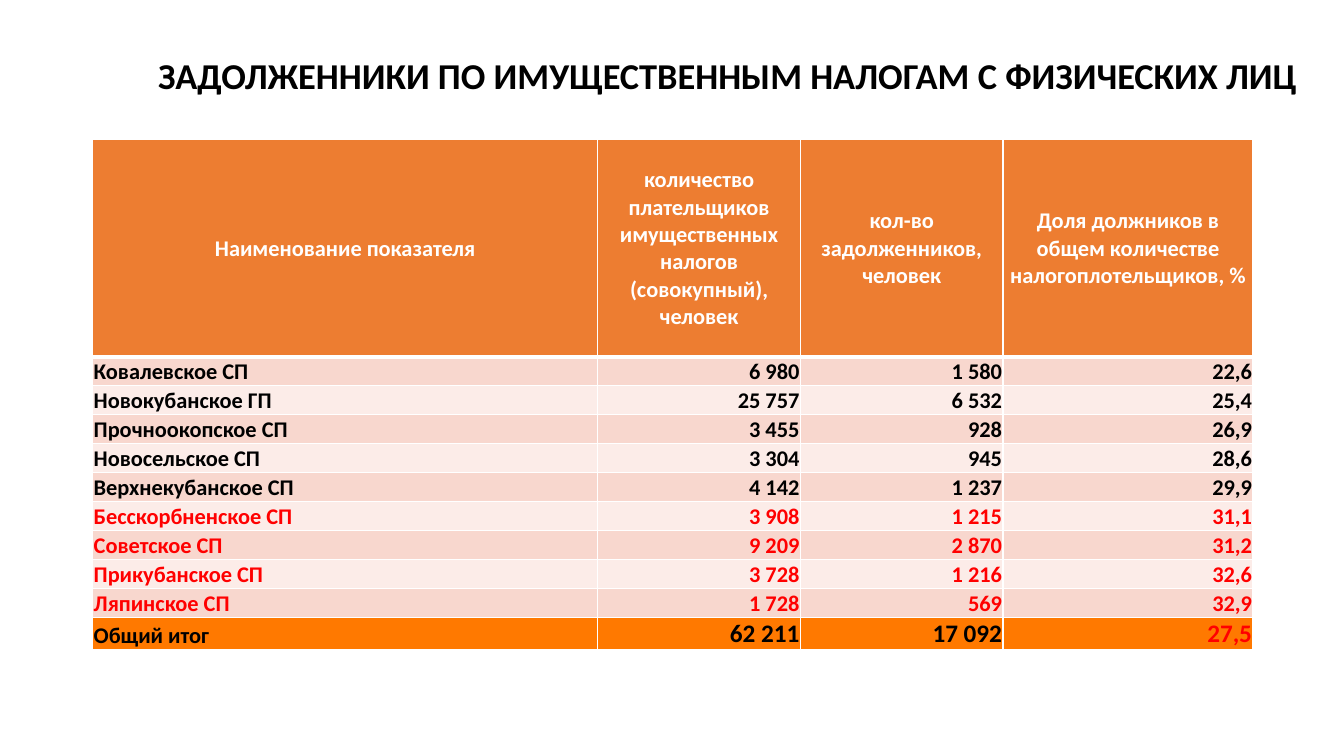
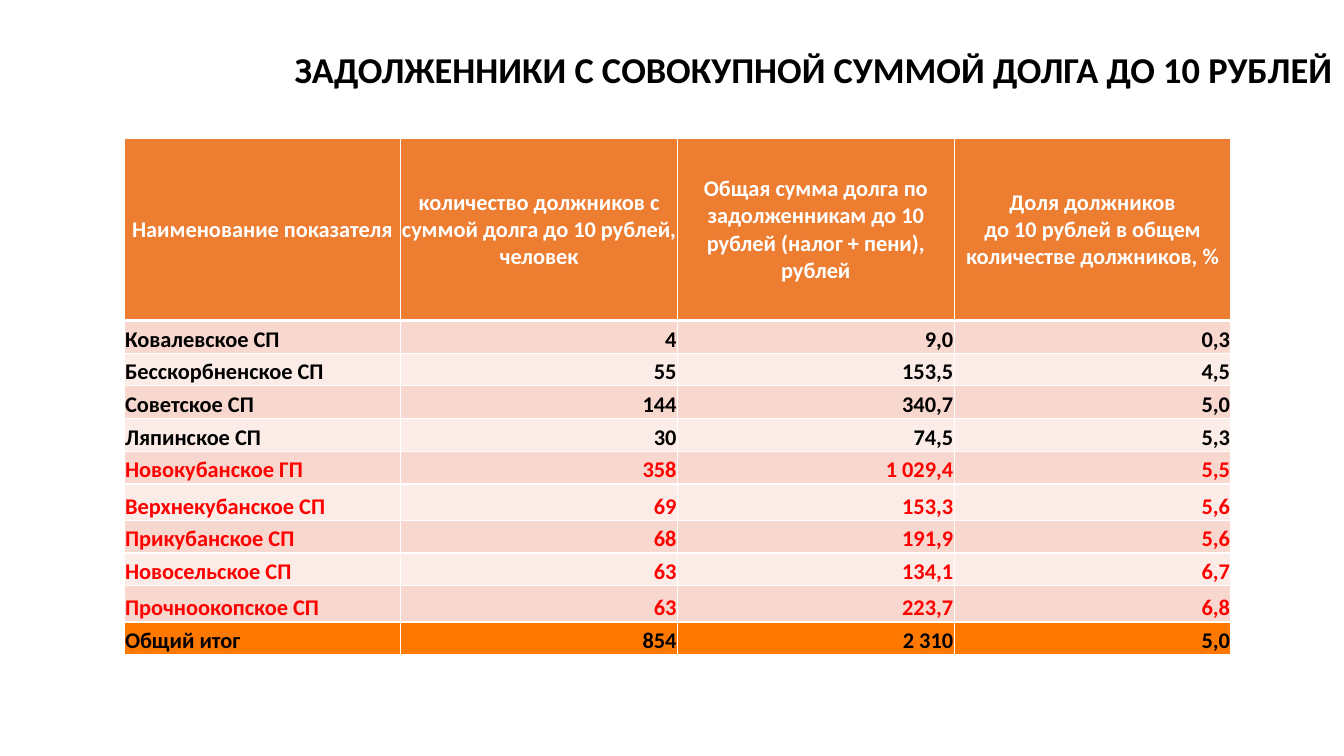
from pptx import Presentation
from pptx.dml.color import RGBColor
from pptx.enum.text import MSO_ANCHOR, PP_ALIGN
from pptx.oxml import parse_xml
from pptx.oxml.ns import nsdecls
from pptx.util import Inches, Pt

COLORS = {
    "white": "FFFFFF",
    "black": "000000",
    "red": "FF0000",
    "header": "ED7D31",
    "odd": "F8D7CE",
    "even": "FCECE8",
    "total": "FF7900",
}


class DebtDeck:
    font_name = "Calibri"
    title_size = 26
    cell_size = 16
    title_width = 87.55
    title_height = 11.33

    def __init__(self):
        self.deck = Presentation()
        self.deck.slide_width = Inches(13.33)
        self.deck.slide_height = Inches(7.5)
        self.page = None

    def across(self, percent):
        return round(self.deck.slide_width * percent / 100)

    def down(self, percent):
        return round(self.deck.slide_height * percent / 100)

    def style(self, para, size, color, align):
        para.alignment = align
        para.font.name = self.font_name
        para.font.size = Pt(size)
        para.font.bold = True
        para.font.color.rgb = RGBColor.from_string(COLORS[color])

    def add_page(self, title, left, top):
        self.page = self.deck.slides.add_slide(self.deck.slide_layouts[5])
        box = self.page.shapes.title
        box.left, box.top = self.across(left), self.down(top)
        box.width, box.height = self.across(self.title_width), self.down(self.title_height)
        frame = box.text_frame
        frame.text = title
        frame.word_wrap = True
        frame.vertical_anchor = MSO_ANCHOR.MIDDLE
        para = frame.paragraphs[0]
        para.line_spacing = 0.9
        self.style(para, self.title_size, "black", PP_ALIGN.RIGHT)

    def borders(self, cell, top, bottom):
        properties = cell._tc.get_or_add_tcPr()
        for side, width in (("L", 1), ("R", 1), ("T", top), ("B", bottom)):
            properties.append(parse_xml(
                f'<a:ln{side} {nsdecls("a")} w="{Pt(width)}"><a:solidFill>'
                f'<a:srgbClr val="{COLORS["white"]}"/></a:solidFill></a:ln{side}>'))

    def fill_cell(self, cell, text, size, color, fill, align, anchor):
        cell.margin_left = cell.margin_right = cell.margin_top = Inches(0.01)
        cell.margin_bottom = 0
        cell.vertical_anchor = anchor
        cell.text = text
        for para in cell.text_frame.paragraphs:
            self.style(para, size, color, align)
        cell.fill.solid()
        cell.fill.fore_color.rgb = RGBColor.from_string(COLORS[fill])

    def add_table(self, left, top, columns, heights, rows, red_rows,
                  total_size=16, total_color="black"):
        table = self.page.shapes.add_table(
            len(rows), len(columns), self.across(left), self.down(top),
            self.across(sum(columns)), self.down(sum(heights))).table
        table.horz_banding = False
        for column, width in zip(table.columns, columns):
            column.width = self.across(width)
        last = len(rows) - 1
        for number, (values, height) in enumerate(zip(rows, heights)):
            table.rows[number].height = self.down(height)
            for place, text in enumerate(values):
                cell = table.cell(number, place)
                self.borders(cell, 3 if number == 1 else 1, 3 if number == 0 else 1)
                if number == 0:
                    self.fill_cell(cell, text, self.cell_size, "white", "header",
                                   PP_ALIGN.CENTER, MSO_ANCHOR.MIDDLE)
                    continue
                size, color = self.cell_size, "red" if number in red_rows else "black"
                fill = "odd" if number % 2 else "even"
                if number == last:
                    fill = "total"
                    size = total_size if place else self.cell_size
                    color = total_color if place == len(columns) - 1 else "black"
                self.fill_cell(cell, text, size, color, fill,
                               PP_ALIGN.RIGHT if place else PP_ALIGN.LEFT, MSO_ANCHOR.BOTTOM)


PROPERTY_TAX = [
    ("Наименование показателя",
     "количество плательщиков имущественных налогов (совокупный), человек",
     "кол-во задолженников, человек",
     "Доля должников в общем количестве налогоплотельщиков, %"),
    ("Ковалевское СП", "6 980", "1 580", "22,6"),
    ("Новокубанское ГП", "25 757", "6 532", "25,4"),
    ("Прочноокопское СП", "3 455", "928", "26,9"),
    ("Новосельское СП", "3 304", "945", "28,6"),
    ("Верхнекубанское СП", "4 142", "1 237", "29,9"),
    ("Бесскорбненское СП", "3 908", "1 215", "31,1"),
    ("Советское СП", "9 209", "2 870", "31,2"),
    ("Прикубанское СП", "3 728", "1 216", "32,6"),
    ("Ляпинское СП", "1 728", "569", "32,9"),
    ("Общий итог", "62 211", "17 092", "27,5"),
]

SMALL_DEBT = [
    ("Наименование показателя",
     "количество должников с суммой долга до 10 рублей, человек",
     "Общая сумма долга по задолженникам до 10 рублей (налог + пени), рублей",
     "Доля должников\nдо 10 рублей в общем количестве должников, %"),
    ("Ковалевское СП", "4", "9,0", "0,3"),
    ("Бесскорбненское СП", "55", "153,5", "4,5"),
    ("Советское СП", "144", "340,7", "5,0"),
    ("Ляпинское СП", "30", "74,5", "5,3"),
    ("Новокубанское ГП", "358", "1 029,4", "5,5"),
    ("Верхнекубанское СП", "69", "153,3", "5,6"),
    ("Прикубанское СП", "68", "191,9", "5,6"),
    ("Новосельское СП", "63", "134,1", "6,7"),
    ("Прочноокопское СП", "63", "223,7", "6,8"),
    ("Общий итог", "854", "2 310", "5,0"),
]


def main():
    debt = DebtDeck()

    debt.add_page("ЗАДОЛЖЕННИКИ ПО ИМУЩЕСТВЕННЫМ НАЛОГАМ С ФИЗИЧЕСКИХ ЛИЦ", 9.83, 4.67)
    debt.add_table(6.9, 18.4, [37.58, 15.08, 15.08, 18.6], [28.8] + [3.84] * 10,
                   PROPERTY_TAX, range(6, 10), total_size=18, total_color="red")

    debt.add_page("ЗАДОЛЖЕННИКИ С СОВОКУПНОЙ СУММОЙ ДОЛГА ДО 10 РУБЛЕЙ", 12.45, 3.87)
    heights = [24.13] + [4.8 if number in (6, 9) else 4.33 for number in range(1, 11)]
    debt.add_table(9.23, 18.27, [20.59] * 4, heights, SMALL_DEBT, range(5, 10))

    debt.deck.save("out.pptx")


if __name__ == "__main__":
    main()
